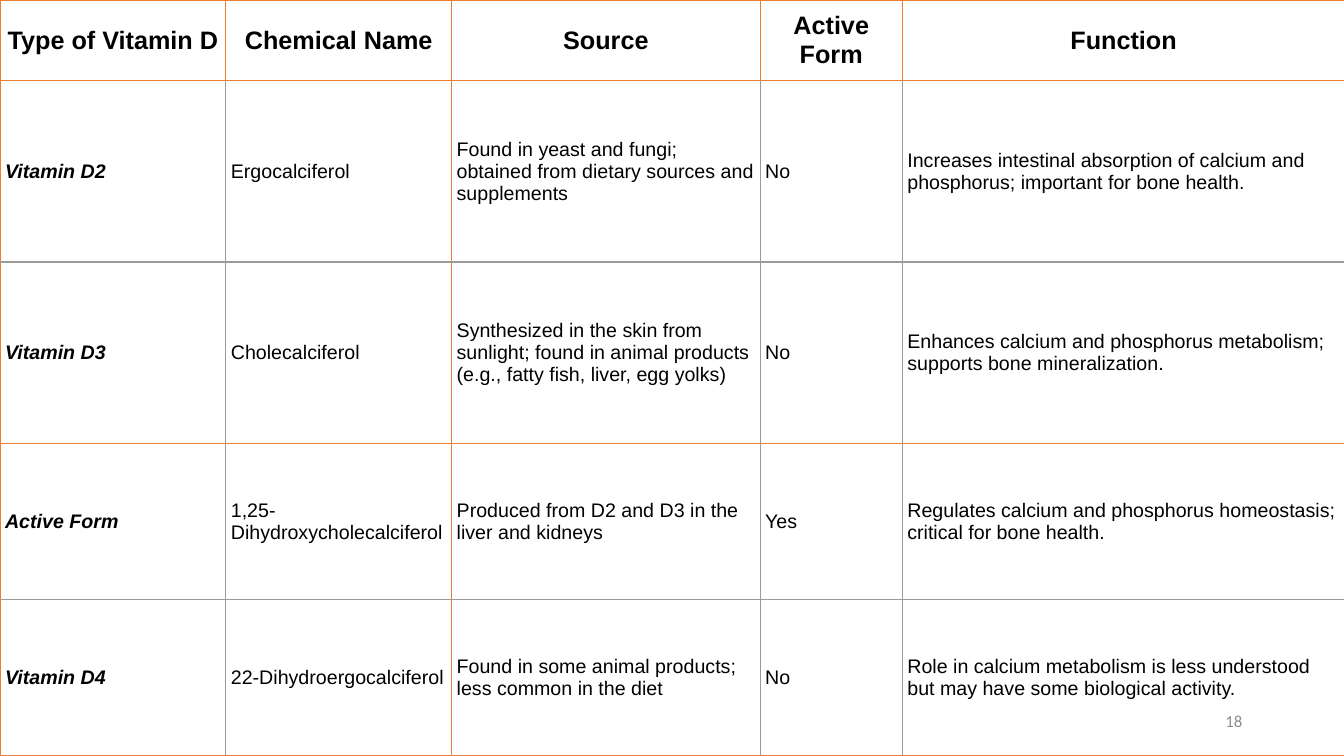
from dataclasses import dataclass

from lxml import etree
from pptx import Presentation
from pptx.dml.color import RGBColor
from pptx.enum.text import MSO_ANCHOR, PP_ALIGN
from pptx.oxml.ns import qn
from pptx.util import Inches, Pt

LEFT, CENTER, RIGHT = PP_ALIGN.LEFT, PP_ALIGN.CENTER, PP_ALIGN.RIGHT
MIDDLE = MSO_ANCHOR.MIDDLE

BLACK = RGBColor(0x00, 0x00, 0x00)
ORANGE = RGBColor(0xED, 0x7D, 0x31)
RULE_GREY = RGBColor(0x9A, 0x9A, 0x9A)
NUMBER_GREY = RGBColor(0x8C, 0x8C, 0x8C)

BLANK_LAYOUT = 6
SLIDE_WIDTH, SLIDE_HEIGHT = 13.33, 7.5
COLUMN_WIDTHS = [2.24, 2.24, 3.06, 1.41, 4.39]
ROW_HEIGHTS = [0.8, 1.8, 1.8, 1.55, 1.55]
ORANGE_COLUMN_EDGES = {0, 2, len(COLUMN_WIDTHS)}
ORANGE_ROW_EDGES = {0, 1, 3, len(ROW_HEIGHTS)}
HEAVY_ROW_EDGE = 3


@dataclass(frozen=True)
class Vitamin:
    kind: str
    chemical: str
    source: str
    active: str
    function: str

    def texts(self) -> list[str]:
        return [self.kind, self.chemical, self.source, self.active, self.function]


@dataclass(frozen=True)
class Rule:
    color: RGBColor = ORANGE
    points: float = 1


HEADER = Vitamin("Type of Vitamin D", "Chemical Name", "Source", "Active Form", "Function")
VITAMINS = [
    Vitamin("Vitamin D2", "Ergocalciferol",
            "Found in yeast and fungi; obtained from dietary sources and supplements", "No",
            "Increases intestinal absorption of calcium and phosphorus; important for bone health."),
    Vitamin("Vitamin D3", "Cholecalciferol",
            "Synthesized in the skin from sunlight; found in animal products "
            "(e.g., fatty fish, liver, egg yolks)", "No",
            "Enhances calcium and phosphorus metabolism; supports bone mineralization."),
    Vitamin("Active Form", "1,25-Dihydroxycholecalciferol",
            "Produced from D2 and D3 in the liver and kidneys", "Yes",
            "Regulates calcium and phosphorus homeostasis; critical for bone health."),
    Vitamin("Vitamin D4", "22-Dihydroergocalciferol",
            "Found in some animal products; less common in the diet", "No",
            "Role in calcium metabolism is less understood but may have some biological activity."),
]


def write_text(frame, text: str, *, size: float = 14, font: str = "Arial",
               color: RGBColor = BLACK, bold: bool = False, italic: bool = False,
               align=LEFT) -> None:
    frame.word_wrap = True
    para = frame.paragraphs[0]
    para.alignment = align
    span = para.add_run()
    span.text = text
    span.font.size = Pt(size)
    span.font.name = font
    span.font.color.rgb = color
    span.font.bold = bold
    span.font.italic = italic


def column_rule(row: int, edge: int) -> Rule:
    return Rule() if row == 0 or edge in ORANGE_COLUMN_EDGES else Rule(RULE_GREY)


def row_rule(edge: int) -> Rule:
    if edge == HEAVY_ROW_EDGE:
        return Rule(points=1.5)
    return Rule() if edge in ORANGE_ROW_EDGES else Rule(RULE_GREY)


def draw_borders(cell, row: int, column: int) -> None:
    properties = cell._tc.get_or_add_tcPr()
    rules = {
        "a:lnL": column_rule(row, column),
        "a:lnR": column_rule(row, column + 1),
        "a:lnT": row_rule(row),
        "a:lnB": row_rule(row + 1),
    }
    for position, (tag, rule) in enumerate(rules.items()):
        line = etree.Element(qn(tag), w=str(Pt(rule.points)))
        fill = etree.SubElement(line, qn("a:solidFill"))
        etree.SubElement(fill, qn("a:srgbClr"), val=str(rule.color))
        properties.insert(position, line)


def fill_cell(cell, text: str, row: int, column: int) -> None:
    cell.fill.background()
    cell.vertical_anchor = MIDDLE
    cell.margin_left = cell.margin_right = Inches(0.05)
    cell.margin_top = cell.margin_bottom = Inches(0.03)
    heading = row == 0
    write_text(cell.text_frame, text, size=18 if heading else 14,
               bold=heading or column == 0, italic=not heading and column == 0,
               align=CENTER if heading else LEFT)
    draw_borders(cell, row, column)


def add_slide_number(slide) -> None:
    box = slide.shapes.add_textbox(Inches(9.42), Inches(6.95), Inches(3), Inches(0.4))
    box.text_frame.vertical_anchor = MIDDLE
    write_text(box.text_frame, "18", size=12, font="Calibri", color=NUMBER_GREY, align=RIGHT)


def add_vitamin_table(slide) -> None:
    records = [HEADER, *VITAMINS]
    table = slide.shapes.add_table(len(records), len(COLUMN_WIDTHS), 0, 0,
                                   Inches(SLIDE_WIDTH), Inches(SLIDE_HEIGHT)).table
    table.first_row = table.horz_banding = False
    for column, width in zip(table.columns, COLUMN_WIDTHS):
        column.width = Inches(width)
    for row, height in zip(table.rows, ROW_HEIGHTS):
        row.height = Inches(height)
    for row_index, record in enumerate(records):
        for column_index, text in enumerate(record.texts()):
            fill_cell(table.cell(row_index, column_index), text, row_index, column_index)


def main() -> None:
    deck = Presentation()
    deck.slide_width = Inches(SLIDE_WIDTH)
    deck.slide_height = Inches(SLIDE_HEIGHT)
    slide = deck.slides.add_slide(deck.slide_layouts[BLANK_LAYOUT])
    add_slide_number(slide)
    add_vitamin_table(slide)
    deck.save("out.pptx")


if __name__ == "__main__":
    main()
